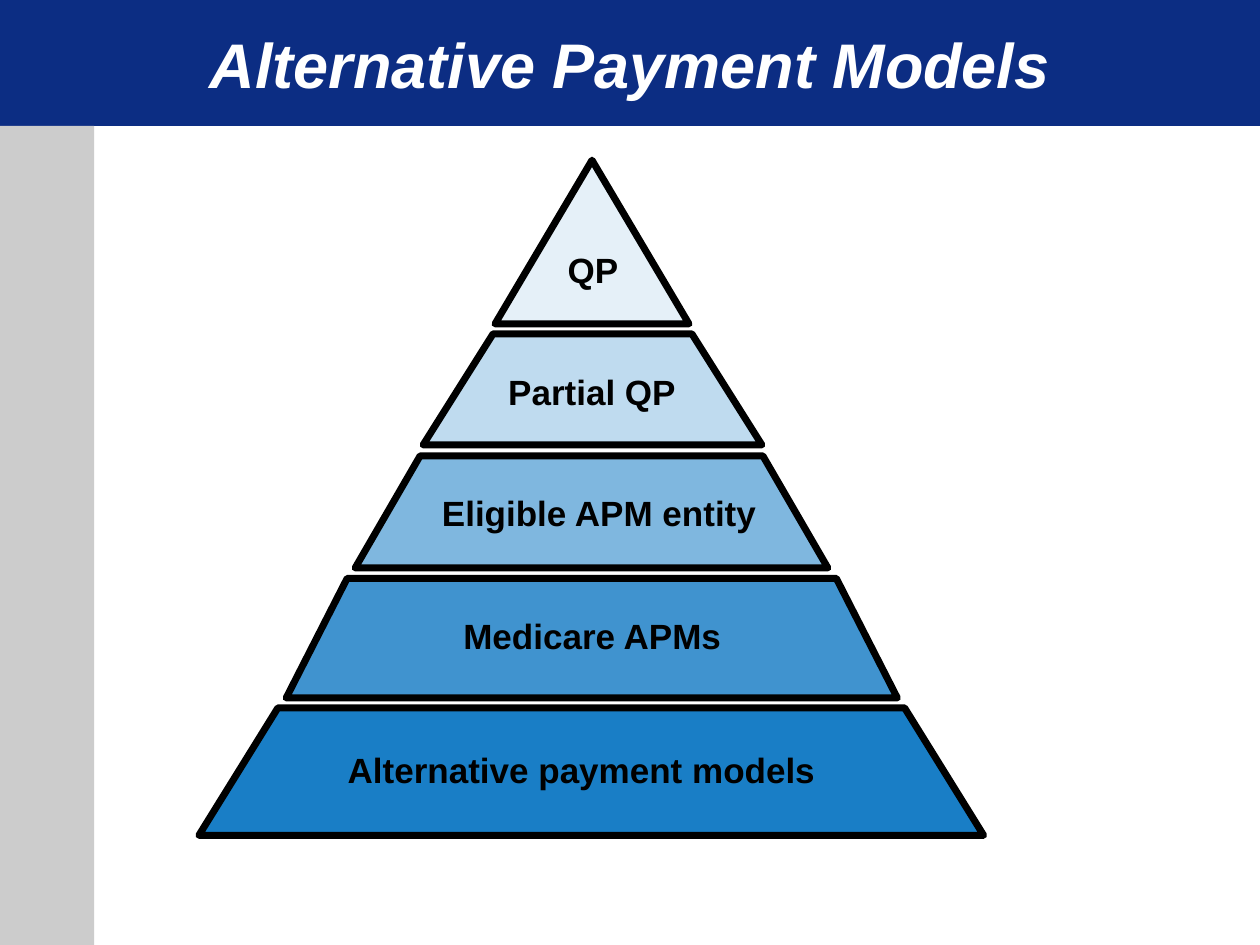
"""Build the Alternative Payment Models pyramid slide."""
from lxml import etree
from pptx import Presentation
from pptx.dml.color import RGBColor
from pptx.enum import shapes, text
from pptx.oxml import ns
from pptx.util import Cm, Pt

NAVY = RGBColor(0x0C, 0x2D, 0x83)
GREY = RGBColor(0xCC, 0xCC, 0xCC)
BLUE = RGBColor(0x00, 0x70, 0xC0)
BLACK = RGBColor(0, 0, 0)
WHITE = RGBColor(0xFF, 0xFF, 0xFF)
LEFT, CENTER = text.PP_ALIGN.LEFT, text.PP_ALIGN.CENTER
RECTANGLE = shapes.MSO_SHAPE.RECTANGLE
TRAPEZOID = shapes.MSO_SHAPE.TRAPEZOID
TRIANGLE = shapes.MSO_SHAPE.ISOSCELES_TRIANGLE

WIDTH, HEIGHT, BANNER, SIDEBAR = 25.4, 19.05, 2.54, 1.9
LABEL_HEIGHT = 1.12
TITLE = "Alternative Payment Models"
# label, tier box, slant, opacity, label left/top/width, alignment
TIERS = [
    ("Alternative payment models", (4.01, 14.27, 15.82, 2.57), 0.62, 90, (6.76, 14.96, 13.34), LEFT),
    ("Medicare APMs", (5.77, 11.66, 12.32, 2.41), 0.51, 75, (9.09, 12.27, 13.34), LEFT),
    ("Eligible APM entity", (7.16, 9.19, 9.53, 2.26), 0.58, 50, (8.66, 9.78, 6.99), LEFT),
    ("Partial QP", (8.53, 6.73, 6.83, 2.24), 0.63, 25, (9.14, 7.34, 5.59), CENTER),
    ("QP", (9.98, 3.23, 3.91, 3.3), None, 10, (9.58, 4.88, 4.75), CENTER),
]


def add_filled(slide, kind, box, color):
    shape = slide.shapes.add_shape(kind, *map(Cm, box))
    shape.shadow.inherit = False
    shape.fill.solid()
    shape.fill.fore_color.rgb = color
    shape.line.fill.background()
    return shape


def add_tier(slide, box, slant, opacity):
    shape = add_filled(slide, TRAPEZOID if slant else TRIANGLE, box, BLUE)
    if slant:
        shape.adjustments[0] = slant
    color = shape.fill._xPr.find(".//" + ns.qn("a:srgbClr"))
    etree.SubElement(color, ns.qn("a:alpha"), val=str(opacity * 1000))
    shape.line.color.rgb = BLACK
    shape.line.width = Pt(4)
    line = shape.line._get_or_add_ln()
    line.set("cap", "rnd")
    etree.SubElement(line, ns.qn("a:round"))


def add_text(slide, wording, box, size, color, alignment, anchor, italic=None):
    frame = slide.shapes.add_textbox(*map(Cm, box)).text_frame
    frame.word_wrap = True
    frame.vertical_anchor = anchor
    frame.text = wording
    paragraph = frame.paragraphs[0]
    paragraph.alignment = alignment
    font = paragraph.runs[0].font
    font.name, font.size, font.bold, font.italic = "Arial", Pt(size), True, italic
    font.color.rgb = color


def main():
    presentation = Presentation()
    presentation.slide_width, presentation.slide_height = Cm(WIDTH), Cm(HEIGHT)
    slide = presentation.slides.add_slide(presentation.slide_layouts[6])
    banner = (0, 0, WIDTH, BANNER)
    add_filled(slide, RECTANGLE, banner, NAVY)
    add_filled(slide, RECTANGLE, (0, BANNER, SIDEBAR, HEIGHT - BANNER), GREY)
    for _, box, slant, opacity, _, _ in TIERS:
        add_tier(slide, box, slant, opacity)
    add_text(slide, TITLE, banner, 36, WHITE, CENTER, text.MSO_ANCHOR.MIDDLE, True)
    for label, _, _, _, place, alignment in TIERS:
        add_text(slide, label, (*place, LABEL_HEIGHT), 20, BLACK, alignment, text.MSO_ANCHOR.TOP)
    presentation.save("out.pptx")


if __name__ == "__main__":
    main()
